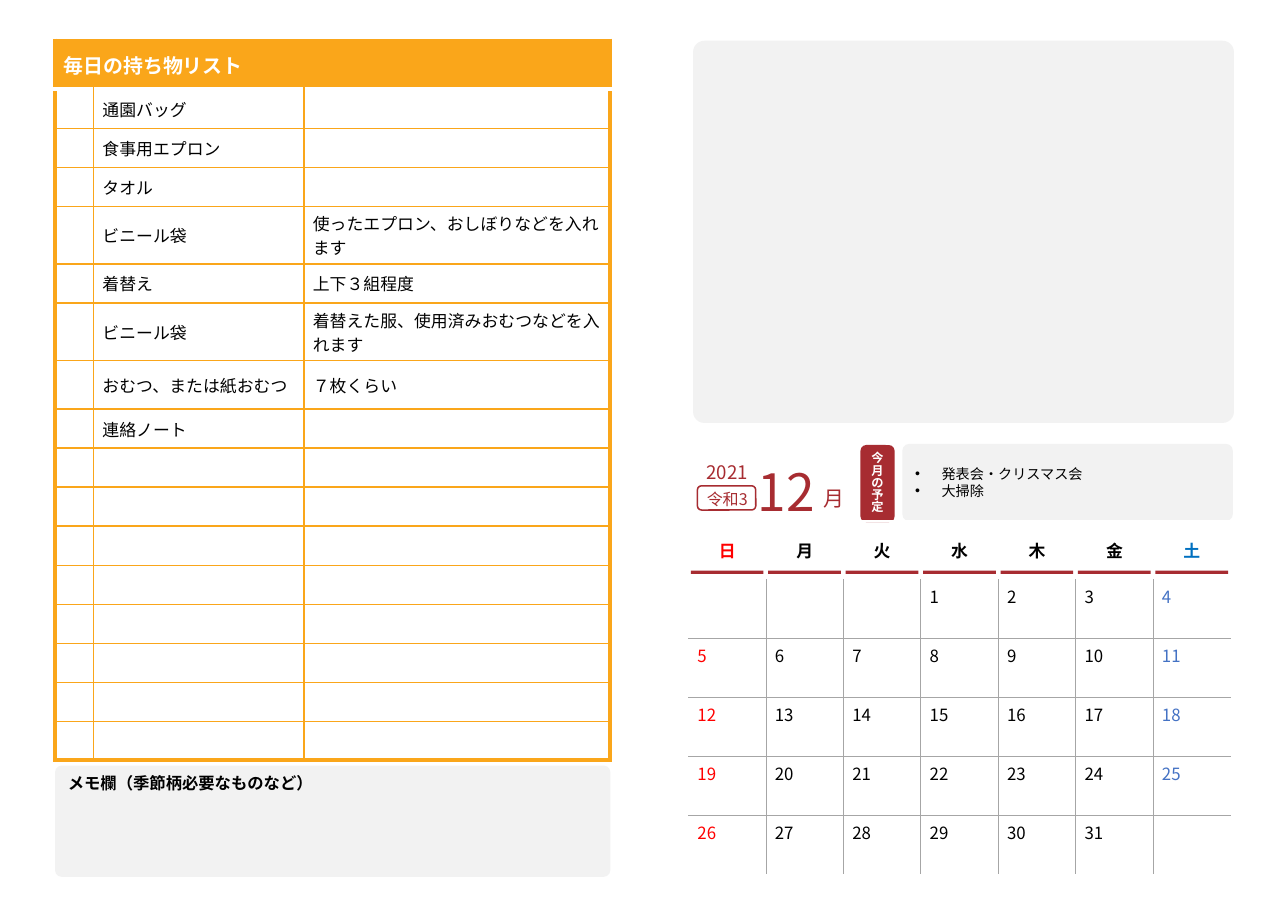
from lxml import etree
from pptx import Presentation
from pptx import util as u
from pptx.dml.color import RGBColor
from pptx.enum import shapes, text
from pptx.oxml.ns import qn

INKS = {"gold": "FAA61A", "red": "A72C31", "pale": "F2F2F2", "gray": "A6A6A6",
        "white": "FFFFFF", "black": "000000", "sun": "FF0000",
        "sat": "0070C0", "blue": "4472C4"}
MID = text.MSO_ANCHOR.MIDDLE
LEFT, MIDST = text.PP_ALIGN.LEFT, text.PP_ALIGN.CENTER


class Page:
    def __init__(self, deck, face):
        self.slide = deck.slides.add_slide(deck.slide_layouts[6])
        self.face = face

    def ink(self, name):
        return RGBColor.from_string(INKS[name])

    def words(self, frame, lines, size, hue="black", bold=False, side=LEFT,
              pad=(0.1, 0.05), anchor=text.MSO_ANCHOR.TOP, wrap=True, lead=None, dots=False):
        look = {"margin_left": u.Inches(pad[0]), "margin_right": u.Inches(pad[0]),
                "margin_top": u.Inches(pad[1]), "margin_bottom": u.Inches(pad[1]),
                "vertical_anchor": anchor, "word_wrap": wrap}
        for key, val in look.items():
            setattr(frame, key, val)
        for num, line in enumerate(lines):
            para = frame.add_paragraph() if num else frame.paragraphs[0]
            if dots:
                props = para._p.get_or_add_pPr()
                props.set("marL", str(u.Inches(0.24)))
                props.set("indent", str(-u.Inches(0.24)))
                etree.SubElement(props, qn("a:buFont")).set("typeface", "Arial")
                etree.SubElement(props, qn("a:buChar")).set("char", "•")
            para.alignment = side
            if lead:
                para.line_spacing = u.Pt(lead)
            run = para.add_run()
            run.text = line
            for key, val in {"size": u.Pt(size), "bold": bold, "name": self.face}.items():
                setattr(run.font, key, val)
            run.font.color.rgb = self.ink(hue)
            etree.SubElement(run._r.get_or_add_rPr(), qn("a:ea")).set("typeface", self.face)

    def box(self, place, fill=None, line=None, curve=None):
        kind = shapes.MSO_SHAPE.RECTANGLE if curve is None else shapes.MSO_SHAPE.ROUNDED_RECTANGLE
        shape = self.slide.shapes.add_shape(kind, *map(u.Inches, place))
        shape.shadow.inherit = False
        if curve is not None:
            shape.adjustments[0] = curve
        if fill:
            shape.fill.solid()
            shape.fill.fore_color.rgb = self.ink(fill)
        else:
            shape.fill.background()
        if line:
            shape.line.color.rgb = self.ink(line)
            shape.line.width = u.Pt(1)
        else:
            shape.line.fill.background()
        return shape.text_frame

    def label(self, place, line, size, hue, **look):
        frame = self.slide.shapes.add_textbox(*map(u.Inches, place)).text_frame
        self.words(frame, [line], size, hue, **look)

    def grid(self, place, cols, rows):
        frame = self.slide.shapes.add_table(len(rows), len(cols), *map(u.Inches, place))
        table = frame.table
        table.first_row = table.horz_banding = False
        for col, wide in zip(table.columns, cols):
            col.width = u.Inches(wide)
        for row, high in zip(table.rows, rows):
            row.height = u.Inches(high)
        return table

    def cell(self, cell, line, edges, fill=None, size=11, **look):
        if line:
            self.words(cell.text_frame, [line], size, pad=(0.08, 0.04), **look)
        else:
            end = etree.SubElement(cell.text_frame.paragraphs[0]._p, qn("a:endParaRPr"))
            end.set("sz", str(size * 100))
        cell.margin_left = cell.margin_right = u.Inches(0.08)
        cell.margin_top = cell.margin_bottom = u.Inches(0.04)
        cell.vertical_anchor = look.get("anchor")
        props = cell._tc.get_or_add_tcPr()
        for side, (hue, wide) in zip("LRTB", edges):
            edge = etree.SubElement(props, qn("a:ln" + side), w=str(u.Pt(wide)))
            solid = etree.SubElement(edge, qn("a:solidFill"))
            etree.SubElement(solid, qn("a:srgbClr")).set("val", INKS[hue])
        if fill:
            cell.fill.solid()
            cell.fill.fore_color.rgb = self.ink(fill)
        else:
            cell.fill.background()


def pack(page):
    # Daily list
    items = [("通園バッグ", ""), ("食事用エプロン", ""), ("タオル", ""),
             ("ビニール袋", "使ったエプロン、おしぼりなどを入れます"),
             ("着替え", "上下３組程度"),
             ("ビニール袋", "着替えた服、使用済みおむつなどを入れます"),
             ("おむつ、または紙おむつ", "７枚くらい"), ("連絡ノート", "")]
    last, tall = 16, (0, 4, 6, 7)
    items += [("", "")] * (last - len(items))
    thin = (6.37 - 0.44 * len(tall)) / (last + 1 - len(tall))
    rows = [0.44 if num in tall else thin for num in range(last + 1)]
    table = page.grid((0.5, 0.37, 5.04, 6.37), (0.35, 1.91, 2.78), rows)
    thick, fine, gap = ("gold", 3), ("gold", 1), ("white", 3)
    head = table.cell(0, 0)
    head.merge(table.cell(0, 2))
    page.cell(head, "毎日の持ち物リスト", (thick, thick, thick, gap), "gold", 13,
              hue="white", bold=True, anchor=MID)
    for row, item in enumerate(items, 1):
        for col, line in enumerate(("",) + item):
            edges = (thick if col == 0 else fine, thick if col == 2 else fine,
                     gap if row == 1 else fine, thick if row == last else fine)
            page.cell(table.cell(row, col), line, edges, anchor=MID)

    # Memo
    memo = page.box((0.5, 6.95, 5.04, 1.01), "pale", curve=0.06)
    page.words(memo, ["メモ欄（季節柄必要なものなど）"], 10.7, bold=True)


def plan(page):
    # Photo space and events
    page.box((6.29, 0.37, 4.91, 3.47), "pale", curve=0.03)
    events = page.box((8.19, 4.03, 3, 0.7), "pale", curve=0.09)
    page.words(events, ["発表会・クリスマス会", "大掃除"], 9.2, anchor=MID, dots=True)
    tab = page.box((7.81, 4.04, 0.31, 0.7), "red", curve=0.17)
    page.words(tab, ["今月の予定"], 8, "white", True, MIDST, (0.07, 0.02), MID, lead=8)

    # Month
    page.label((6.78, 4.13, 0.84, 0.67), "12", 33.6, "red")
    page.label((7.38, 4.36, 0.39, 0.33), "月", 13.7, "red", wrap=False)


def dates(page):
    # Bars under the day names
    left, wide, high = 6.25, 4.92 / 7, 3.21 / 6
    for col in range(7):
        page.box((left + 0.02 + col * wide, 5.18, 0.66, 0.03), "red")

    # Days
    table = page.grid((left, 4.73, 4.92, 3.21), [wide] * 7, [high] * 6)
    line, none = ("gray", 0.75), ("white", 0.75)
    for col, name in enumerate("日月火水木金土"):
        hue = {0: "sun", 6: "sat"}.get(col, "black")
        page.cell(table.cell(0, col), name, [("white", 1)] * 3 + [none],
                  hue=hue, bold=True, side=MIDST, anchor=MID)
        for row in range(1, 6):
            day = (row - 1) * 7 + col - 2
            edges = (none if col == 0 else line, none if col == 6 else line,
                     none if row == 1 else line, none if row == 5 else line)
            page.cell(table.cell(row, col), str(day) if 1 <= day <= 31 else "", edges,
                      hue={0: "sun", 6: "blue"}.get(col, "black"))

    # Year
    page.label((6.29, 4.39, 0.62, 0.28), "令和3", 10.5, "red", side=MIDST, pad=(0.05, 0.05))
    page.label((6.29, 4.13, 0.62, 0.31), "2021", 12.2, "red", side=MIDST, pad=(0.05, 0.05))
    page.box((6.33, 4.41, 0.53, 0.22), line="red", curve=0.17)


def main():
    deck = Presentation()
    deck.slide_width, deck.slide_height = u.Inches(11.69), u.Inches(8.27)
    page = Page(deck, "Noto Sans CJK JP")
    pack(page)
    plan(page)
    dates(page)
    deck.save("out.pptx")


if __name__ == "__main__":
    main()
